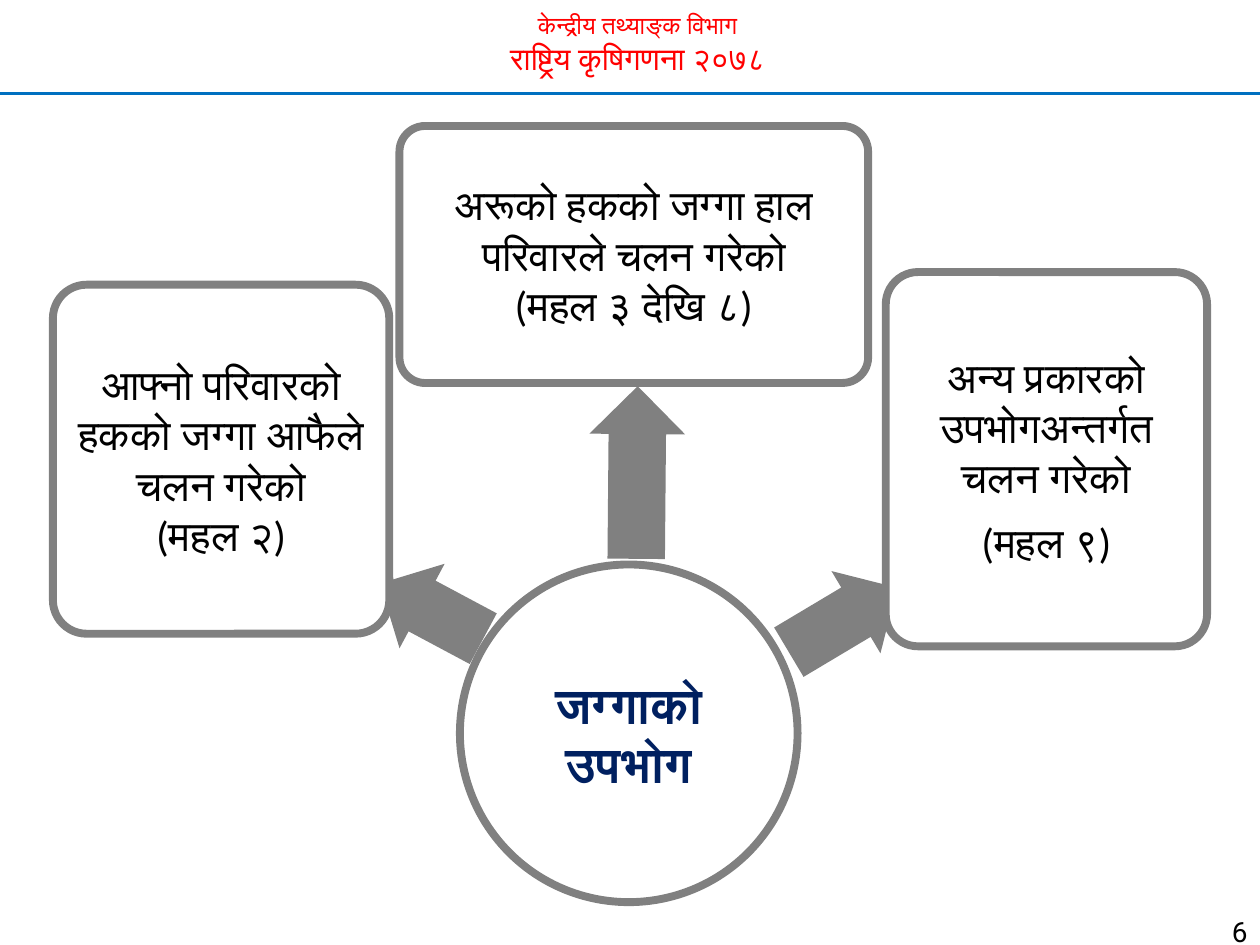
import pptx
import pptx.util
import pptx.dml.color
import pptx.enum.shapes
import pptx.enum.text
import lxml.etree

WIDTH, HEIGHT = 10, 7.5
COLORS = {
    "rule": "0070C0",
    "header": "FF0000",
    "frame": "808080",
    "paper": "FFFFFF",
    "center": "002060",
    "text": "000000",
}
SHAPES = pptx.enum.shapes.MSO_SHAPE
ALIGN = pptx.enum.text.PP_ALIGN
ANCHOR = pptx.enum.text.MSO_ANCHOR

# Land uses around the centre: arrow (place, turn), box place, lines, space after
LAND_USES = [
    ((2.96, 4.47, 0.93, 0.76), 28.1, (0.42, 2.26, 2.67, 2.77),
     ["आफ्नो परिवारको हकको जग्गा आफैले चलन गरेको", "(महल २)"], 0),
    ((4.37, 3.37, 1.37, 0.76), 90.5, (3.17, 1, 3.72, 2.04),
     ["अरूको हकको जग्गा हाल परिवारले चलन गरेको", "(महल ३ देखि ८)"], 0),
    ((6.19, 4.54, 1, 0.76), 149.2, (7.03, 2.16, 2.55, 2.97),
     ["अन्य प्रकारको उपभोगअन्तर्गत चलन गरेको", "(महल ९)"], 8.4),
]


def color(name):
    return pptx.dml.color.RGBColor.from_string(COLORS[name])


def share(part, whole):
    """Length on the slide as a share of its width or height."""
    return pptx.util.Inches(part * whole)


def place(left, top, width, height):
    """Turn grid inches into slide lengths."""
    return [share(left / WIDTH, WIDTH), share(top / HEIGHT, HEIGHT),
            share(width / WIDTH, WIDTH), share(height / HEIGHT, HEIGHT)]


def write_text(shape, lines, color_name, sizes, margins=None, font=None, **layout):
    """Write one paragraph per line; layout holds paragraph format values."""
    frame = shape.text_frame
    frame.word_wrap = True
    if margins is not None:
        for side in ("left", "right", "top", "bottom"):
            setattr(frame, "margin_" + side, pptx.util.Inches(margins))
        frame.vertical_anchor = ANCHOR.MIDDLE
    paragraph_values = {"alignment": ALIGN.CENTER, **layout}
    for index, (line, size) in enumerate(zip(lines, sizes)):
        paragraph = frame.add_paragraph() if index else frame.paragraphs[0]
        for name, value in paragraph_values.items():
            setattr(paragraph, name, value)
        run = paragraph.add_run()
        run.text = line
        run.font.color.rgb = color(color_name)
        font_values = {"name": "Calibri", "size": pptx.util.Pt(size), **(font or {})}
        for name, value in font_values.items():
            setattr(run.font, name, value)


def add_filled(slide, kind, position, fill_name, line_width):
    shape = slide.shapes.add_shape(kind, *place(*position))
    shape.shadow.inherit = False
    shape.fill.solid()
    shape.fill.fore_color.rgb = color(fill_name)
    shape.line.color.rgb = color("frame")
    shape.line.width = pptx.util.Pt(line_width)
    return shape


def add_arrow(slide, position, turn):
    arrow = add_filled(slide, SHAPES.LEFT_ARROW, position, "frame", 0.75)
    arrow.line.fill.background()
    arrow.adjustments[0] = 0.6
    arrow.adjustments[1] = 0.5
    arrow.rotation = turn


def add_box(slide, position, lines, space_after):
    box = add_filled(slide, SHAPES.ROUNDED_RECTANGLE, position, "paper", 4.5)
    box.adjustments[0] = 0.1
    write_text(box, lines, "text", [24] * len(lines), margins=0.05,
               space_after=pptx.util.Pt(space_after))


def add_rule(slide, top):
    rule = slide.shapes.add_connector(
        pptx.enum.shapes.MSO_CONNECTOR.STRAIGHT,
        0, share(top / HEIGHT, HEIGHT), share(1, WIDTH), share(top / HEIGHT, HEIGHT))
    rule.line.color.rgb = color("rule")
    rule.line.width = pptx.util.Pt(1.5)
    lxml.etree.SubElement(rule._element.spPr, pptx.oxml.ns.qn("a:effectLst"))


def add_label(slide, position, lines, color_name, sizes, **options):
    label = slide.shapes.add_textbox(*place(*position))
    write_text(label, lines, color_name, sizes, **options)


def main():
    presentation = pptx.Presentation()
    presentation.slide_width = share(1, WIDTH)
    presentation.slide_height = share(1, HEIGHT)
    slide = presentation.slides.add_slide(presentation.slide_layouts[6])

    # Header
    add_rule(slide, 0.74)
    add_label(slide, (0.87, 0.03, 8.38, 0.64),
              ["केन्द्रीय तथ्याङ्क विभाग", "राष्ट्रिय कृषिगणना २०७८"], "header", [14, 18])

    # Centre
    circle = add_filled(slide, SHAPES.OVAL, (3.65, 4.48, 2.68, 2.68), "paper", 4.5)
    write_text(circle, ["जग्गाको उपभोग"], "center", [28], margins=0.02,
               font={"bold": True})

    # Arrows and the boxes they point at
    for arrow_position, turn, box_position, lines, space_after in LAND_USES:
        add_arrow(slide, arrow_position, turn)
        add_box(slide, box_position, lines, space_after)

    # Page number
    add_label(slide, (9.33, 7.08, 0.67, 0.33), ["6"], "text", [16],
              font={"name": "Roboto"}, alignment=ALIGN.RIGHT, line_spacing=1.5)

    presentation.save("out.pptx")


if __name__ == "__main__":
    main()
